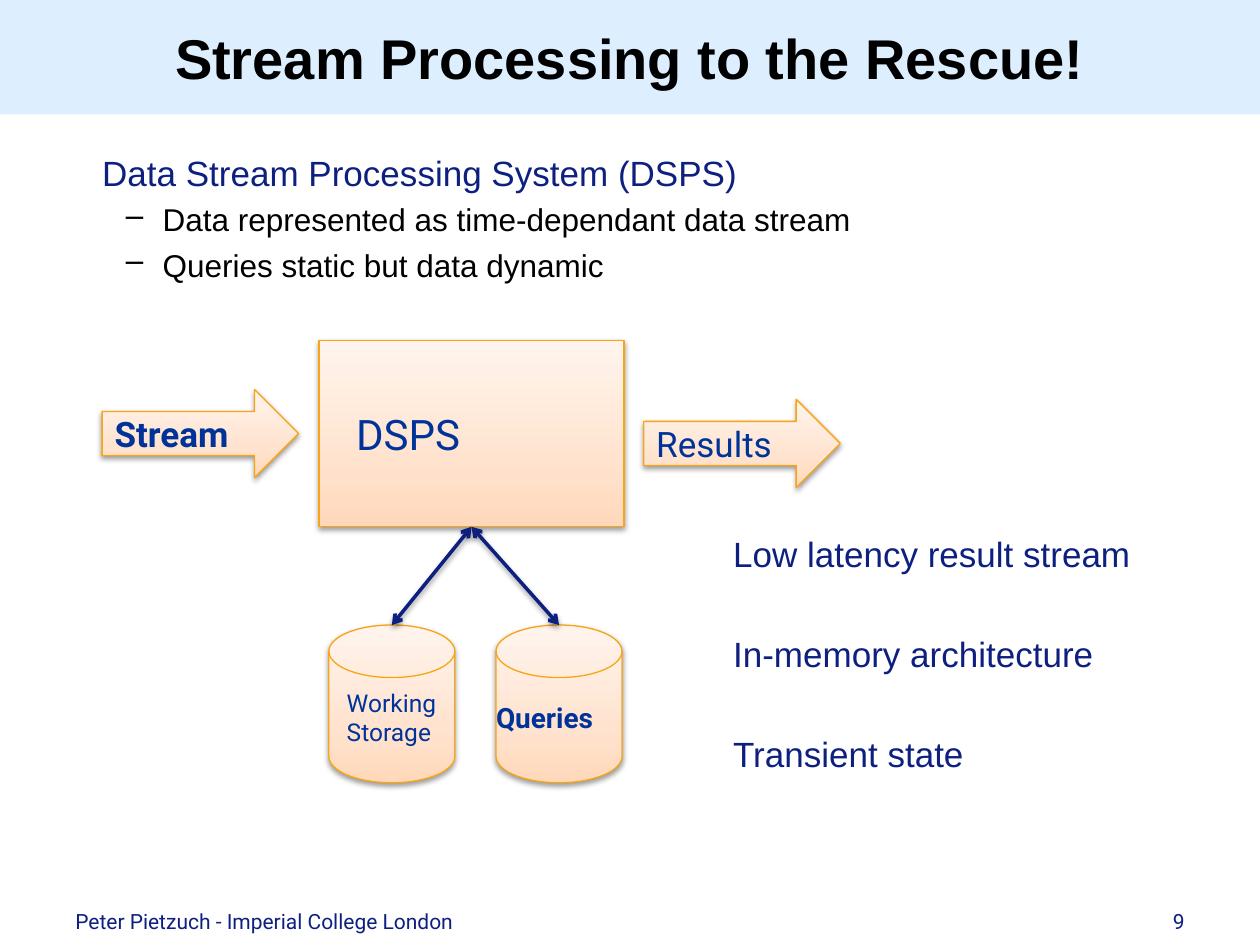
from dataclasses import dataclass

from lxml import etree
from pptx import Presentation
from pptx.dml.color import RGBColor
from pptx.enum.shapes import MSO_CONNECTOR, MSO_SHAPE
from pptx.enum.text import MSO_ANCHOR, PP_ALIGN
from pptx.oxml import parse_xml
from pptx.oxml.ns import nsdecls, qn
from pptx.util import Cm, Pt

RECTANGLE = MSO_SHAPE.RECTANGLE
ARROW = MSO_SHAPE.RIGHT_ARROW
DISK = MSO_SHAPE.FLOWCHART_MAGNETIC_DISK
STRAIGHT = MSO_CONNECTOR.STRAIGHT
TOP, MIDDLE = MSO_ANCHOR.TOP, MSO_ANCHOR.MIDDLE
LEFT, CENTER, RIGHT = PP_ALIGN.LEFT, PP_ALIGN.CENTER, PP_ALIGN.RIGHT
BOTTOM_SITE = 2


@dataclass(frozen=True)
class Theme:
    heading_font: str = "Arial"
    label_font: str = "Roboto"
    band: str = "DDEEFF"
    black: str = "000000"
    navy: str = "0E207F"
    label: str = "003399"
    outline: str = "F9A416"
    gradient: tuple = ((0, "FFD8BA"), (35, "FFE3CF"), (100, "FFF4ED"))
    title_size: int = 32
    system_size: int = 24
    text_size: int = 20
    bullet_size: int = 18
    query_size: int = 16
    storage_size: int = 14
    footer_size: int = 12


THEME = Theme()


def color(value):
    return RGBColor.from_string(value)


def write(frame, text, *, size, ink=THEME.label, font=THEME.label_font, bold=False,
          align=LEFT, before=0, margin=0, hanging=0, bullet=None, first=True):
    """Write one paragraph; first=False appends it to the text already there."""
    para = frame.paragraphs[0] if first else frame.add_paragraph()
    para.text = text
    para.alignment = align
    para.space_before = Pt(before)
    properties = para._p.get_or_add_pPr()
    properties.set("marL", str(Cm(margin)))
    properties.set("indent", str(-Cm(hanging)))
    if bullet:
        etree.SubElement(properties, qn("a:buChar")).set("char", bullet)
    for span in para.runs:
        span.font.size = Pt(size)
        span.font.name = font
        span.font.bold = bold
        span.font.color.rgb = color(ink)
    for line_break in para._p.findall(qn("a:br")):
        etree.SubElement(line_break, qn("a:rPr")).set("sz", str(size * 100))


def add_text_box(page, left, top, width, height):
    box = page.shapes.add_textbox(Cm(left), Cm(top), Cm(width), Cm(height))
    box.text_frame.word_wrap = True
    return box.text_frame


def add_shadow(properties):
    properties.append(parse_xml(
        f'<a:effectLst {nsdecls("a")}><a:outerShdw blurRad="40000" dist="20000" '
        f'dir="5400000" rotWithShape="0"><a:srgbClr val="{THEME.black}">'
        '<a:alpha val="38000"/></a:srgbClr></a:outerShdw></a:effectLst>'))


def add_node(page, kind, left, top, width, height, text, *, inset=0.25, wrap=True, **style):
    """Add a labelled diagram shape with the peach gradient and soft shadow."""
    node = page.shapes.add_shape(kind, Cm(left), Cm(top), Cm(width), Cm(height))
    stops = "".join(f'<a:gs pos="{place * 1000}"><a:srgbClr val="{value}"/></a:gs>'
                    for place, value in THEME.gradient)
    properties = node._element.spPr
    properties.insert(2, parse_xml(
        f'<a:gradFill {nsdecls("a")} rotWithShape="1"><a:gsLst>{stops}</a:gsLst>'
        '<a:lin ang="16200000" scaled="0"/></a:gradFill>'))
    node.line.color.rgb = color(THEME.outline)
    node.line.width = Pt(0.75)
    add_shadow(properties)
    frame = node.text_frame
    frame.word_wrap = wrap
    frame.vertical_anchor = MIDDLE
    frame.margin_left = Cm(inset)
    frame.margin_right = Cm(0)
    write(frame, text, **style)
    return node


def link(page, system, disk):
    """Join the bottom of the system box to the top of a disk, arrows at both ends."""
    line = page.shapes.add_connector(
        STRAIGHT, system.left + system.width // 2, system.top + system.height,
        disk.left + disk.width // 2, disk.top)
    line.begin_connect(system, BOTTOM_SITE)
    line.line.color.rgb = color(THEME.navy)
    line.line.width = Pt(2)
    stroke = line.line._get_or_add_ln()
    for end in ("a:headEnd", "a:tailEnd"):
        etree.SubElement(stroke, qn(end)).set("type", "arrow")
    add_shadow(line._element.spPr)


def add_title(page, text):
    band = page.shapes.add_shape(RECTANGLE, 0, 0, Cm(25.4), Cm(2.31))
    band.shadow.inherit = False
    band.fill.solid()
    band.fill.fore_color.rgb = color(THEME.band)
    band.line.fill.background()
    band.text_frame.vertical_anchor = MIDDLE
    write(band.text_frame, text, size=THEME.title_size, ink=THEME.black,
          font=THEME.heading_font, bold=True, align=CENTER)


def add_definition(page):
    frame = add_text_box(page, 1.3, 2.92, 22.8, 3.2)
    write(frame, "Data Stream Processing System (DSPS)", size=THEME.text_size,
          ink=THEME.navy, font=THEME.heading_font, margin=0.51)
    for point in ("Data represented as time-dependant data stream",
                  "Queries static but data dynamic"):
        write(frame, point, size=THEME.bullet_size, ink=THEME.black,
              font=THEME.heading_font, before=4.2, margin=1.73, hanging=0.74,
              bullet="–", first=False)


def add_diagram(page):
    system = add_node(page, RECTANGLE, 6.43, 6.86, 6.15, 3.76, "DSPS",
                      inset=0.75, size=THEME.system_size)
    add_node(page, ARROW, 2.06, 7.85, 3.96, 1.78, "Stream",
             size=THEME.text_size, bold=True)
    add_node(page, ARROW, 12.98, 8.05, 3.96, 1.78, "Results", size=THEME.text_size)
    storage = add_node(page, DISK, 6.63, 12.6, 2.54, 3.18, "Working\vStorage",
                       inset=0.36, wrap=False, size=THEME.storage_size)
    queries = add_node(page, DISK, 10, 12.6, 2.54, 3.18, "Queries", inset=0,
                       size=THEME.query_size, bold=True)
    for disk in (storage, queries):
        link(page, system, disk)


def add_properties(page):
    frame = add_text_box(page, 14.48, 10.62, 9.7, 5.82)
    points = ("Low latency result stream", "In-memory architecture", "Transient state")
    for index, point in enumerate(points):
        write(frame, point, size=THEME.text_size, ink=THEME.navy,
              font=THEME.heading_font, before=33 if index else 0, margin=0.05,
              first=index == 0)


def add_footer(page, author, number):
    for left, width, text, align in ((1.27, 15.4, author, LEFT),
                                     (18.85, 5.28, number, RIGHT)):
        frame = add_text_box(page, left, 18.19, width, 0.71)
        frame.vertical_anchor = TOP
        write(frame, text, size=THEME.footer_size, ink=THEME.navy, align=align)


def main():
    deck = Presentation()
    deck.slide_width, deck.slide_height = Cm(25.4), Cm(19.05)
    page = deck.slides.add_slide(deck.slide_layouts[6])
    add_title(page, "Stream Processing to the Rescue!")
    add_definition(page)
    add_diagram(page)
    add_properties(page)
    add_footer(page, "Peter Pietzuch - Imperial College London", "9")
    deck.save("out.pptx")


if __name__ == "__main__":
    main()
